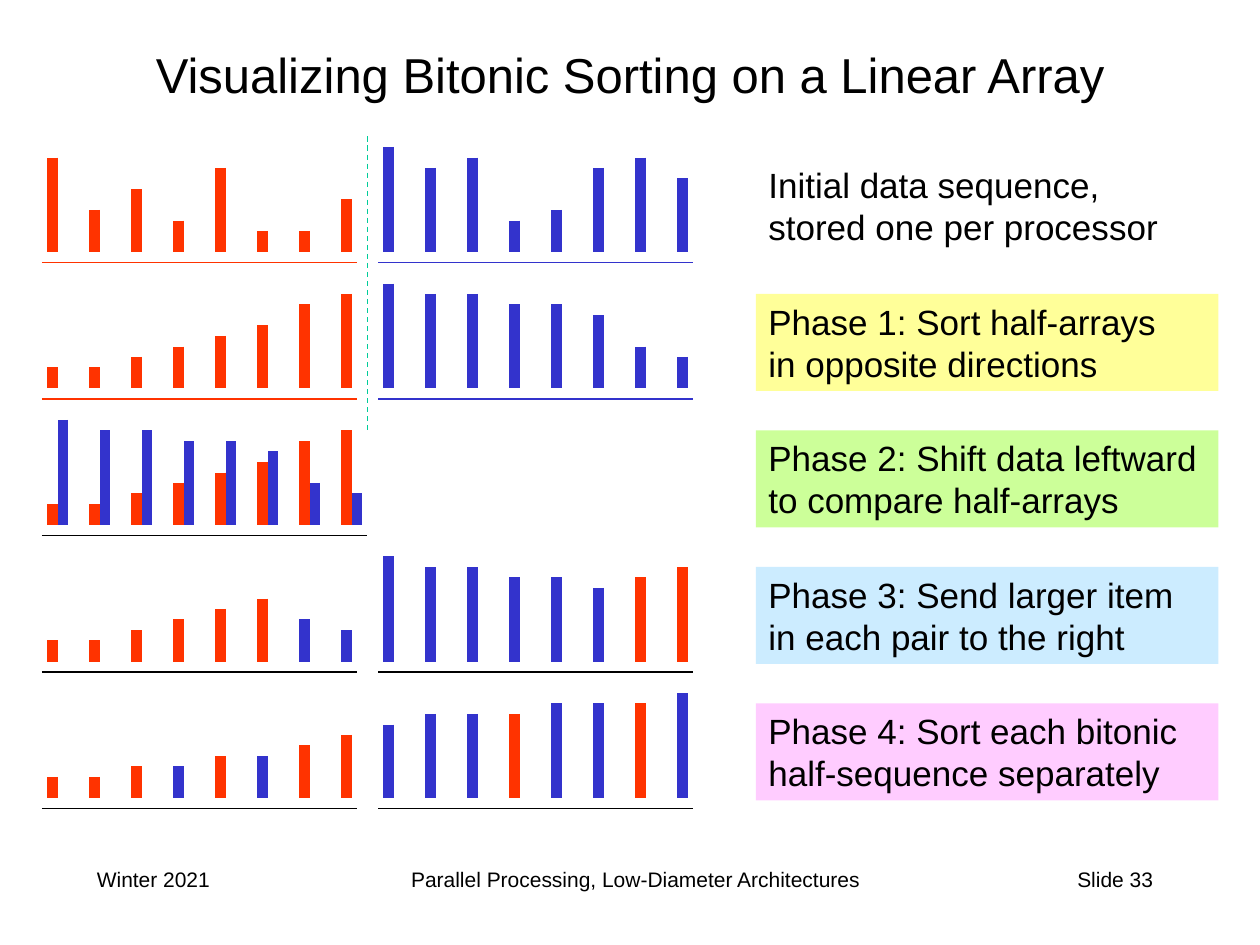
from dataclasses import dataclass

from lxml import etree
from pptx import Presentation
from pptx.dml.color import RGBColor
from pptx.enum import dml, shapes, text
from pptx.oxml import ns
from pptx.util import Inches, Pt


@dataclass(frozen=True)
class Theme:
    font: str = "Arial"
    ink: str = "000000"
    red: str = "FF3300"
    blue: str = "3333CC"
    divider: str = "00CC99"
    title_size: int = 28
    label_size: int = 20
    footer_size: int = 12
    bar_width: float = 6
    rule_width: float = 0.75


@dataclass(frozen=True)
class HalfArray:
    row: int
    start: int
    heights: tuple[int, ...]
    owners: str
    rule: str


@dataclass(frozen=True)
class Phase:
    lines: tuple[str, ...]
    fill: str


@dataclass(frozen=True)
class Footer:
    words: str
    left: float
    width: float
    align: text.PP_ALIGN


THEME = Theme()
OWNER_COLORS = {"R": THEME.red, "B": THEME.blue}
UNIT = 1 / 12
BAR_PITCH = 4
ROW_PITCH = 13
FIRST_BASE = 24
LEFT, SHIFTED, RIGHT = 5, 6, 37
ASCENDING = (2, 2, 3, 4, 5, 6, 8, 9)
DESCENDING = (10, 9, 9, 8, 8, 7, 4, 3)
REDS, BLUES = "R" * 8, "B" * 8

HALF_ARRAYS = (
    HalfArray(0, LEFT, (9, 4, 6, 3, 8, 2, 2, 5), REDS, THEME.red),
    HalfArray(0, RIGHT, (10, 8, 9, 3, 4, 8, 9, 7), BLUES, THEME.blue),
    HalfArray(1, LEFT, ASCENDING, REDS, THEME.red),
    HalfArray(1, RIGHT, DESCENDING, BLUES, THEME.blue),
    HalfArray(2, LEFT, ASCENDING, REDS, THEME.ink),
    HalfArray(2, SHIFTED, DESCENDING, BLUES, THEME.ink),
    HalfArray(3, LEFT, (2, 2, 3, 4, 5, 6, 4, 3), "RRRRRRBB", THEME.ink),
    HalfArray(3, RIGHT, (10, 9, 9, 8, 8, 7, 8, 9), "BBBBBBRR", THEME.ink),
    HalfArray(4, LEFT, (2, 2, 3, 3, 4, 4, 5, 6), "RRRBRBRR", THEME.ink),
    HalfArray(4, RIGHT, (7, 8, 8, 8, 9, 9, 9, 10), "BBBRBBRB", THEME.ink),
)
PHASES = (
    Phase(("Initial data sequence, stored one per processor",), "FFFFFF"),
    Phase(("Phase 1: Sort half-arrays", "in opposite directions"), "FFFF99"),
    Phase(("Phase 2: Shift data leftward to compare half-arrays",), "CCFF99"),
    Phase(("Phase 3: Send larger item in each pair to the right",), "CCECFF"),
    Phase(("Phase 4: Sort each bitonic half-sequence separately",), "FFCCFF"),
)
FOOTERS = (
    Footer("Winter 2021", 0.67, 2.08, text.PP_ALIGN.LEFT),
    Footer("Parallel Processing, Low-Diameter Architectures", 2.42, 5.25, text.PP_ALIGN.CENTER),
    Footer("Slide 33", 7.17, 2.08, text.PP_ALIGN.RIGHT),
)


def write(frame, lines: tuple[str, ...], size: int, align: text.PP_ALIGN) -> None:
    for index, line in enumerate(lines):
        paragraph = frame.paragraphs[0] if index == 0 else frame.add_paragraph()
        paragraph.text = line
        paragraph.alignment = align
        paragraph.font.name = THEME.font
        paragraph.font.size = Pt(size)
        paragraph.font.color.rgb = RGBColor.from_string(THEME.ink)


def draw_line(slide, start: tuple[float, float], end: tuple[float, float],
              color: str, width: float):
    points = [Inches(units * UNIT) for units in (*start, *end)]
    line = slide.shapes.add_connector(shapes.MSO_CONNECTOR.STRAIGHT, *points)
    line.line.color.rgb = RGBColor.from_string(color)
    line.line.width = Pt(width)
    etree.SubElement(line._element.spPr, ns.qn("a:effectLst"))
    return line


def draw_half_array(slide, half: HalfArray) -> None:
    base = FIRST_BASE + half.row * ROW_PITCH
    for index, (height, owner) in enumerate(zip(half.heights, half.owners)):
        x = half.start + index * BAR_PITCH
        draw_line(slide, (x, base - height), (x, base), OWNER_COLORS[owner], THEME.bar_width)
    rule_left = half.start - 1
    rule_right = rule_left + len(half.heights) * BAR_PITCH - 2
    draw_line(slide, (rule_left, base + 1), (rule_right, base + 1), half.rule, THEME.rule_width)


def draw_phase(slide, row: int, phase: Phase) -> None:
    top = 1.25 + row * ROW_PITCH * UNIT
    label = slide.shapes.add_shape(shapes.MSO_SHAPE.RECTANGLE, Inches(6), Inches(top),
                                   Inches(3.67), Inches(0.77))
    label.shadow.inherit = False
    label.fill.solid()
    label.fill.fore_color.rgb = RGBColor.from_string(phase.fill)
    label.line.fill.background()
    frame = label.text_frame
    frame.word_wrap = True
    frame.auto_size = text.MSO_AUTO_SIZE.SHAPE_TO_FIT_TEXT
    frame.vertical_anchor = text.MSO_ANCHOR.TOP
    write(frame, phase.lines, THEME.label_size, text.PP_ALIGN.LEFT)


def draw_footer(slide, footer: Footer) -> None:
    box = slide.shapes.add_textbox(Inches(footer.left), Inches(6.83),
                                   Inches(footer.width), Inches(0.5))
    box.text_frame.word_wrap = True
    write(box.text_frame, (footer.words,), THEME.footer_size, footer.align)


def draw_title(slide) -> None:
    title = slide.shapes.title
    title.left, title.top = Inches(0.75), Inches(0.25)
    title.width, title.height = Inches(8.5), Inches(0.67)
    title.text_frame.vertical_anchor = text.MSO_ANCHOR.MIDDLE
    write(title.text_frame, ("Visualizing Bitonic Sorting on a Linear Array",),
          THEME.title_size, text.PP_ALIGN.CENTER)


def main() -> None:
    deck = Presentation()
    deck.slide_width, deck.slide_height = Inches(10), Inches(7.5)
    slide = deck.slides.add_slide(deck.slide_layouts[5])
    for footer in FOOTERS:
        draw_footer(slide, footer)
    draw_title(slide)
    for half in HALF_ARRAYS:
        draw_half_array(slide, half)
    divider = draw_line(slide, (35, 13), (35, 41), THEME.divider, THEME.rule_width)
    divider.line.dash_style = dml.MSO_LINE.DASH
    for row, phase in enumerate(PHASES):
        draw_phase(slide, row, phase)
    deck.save("out.pptx")


if __name__ == "__main__":
    main()
